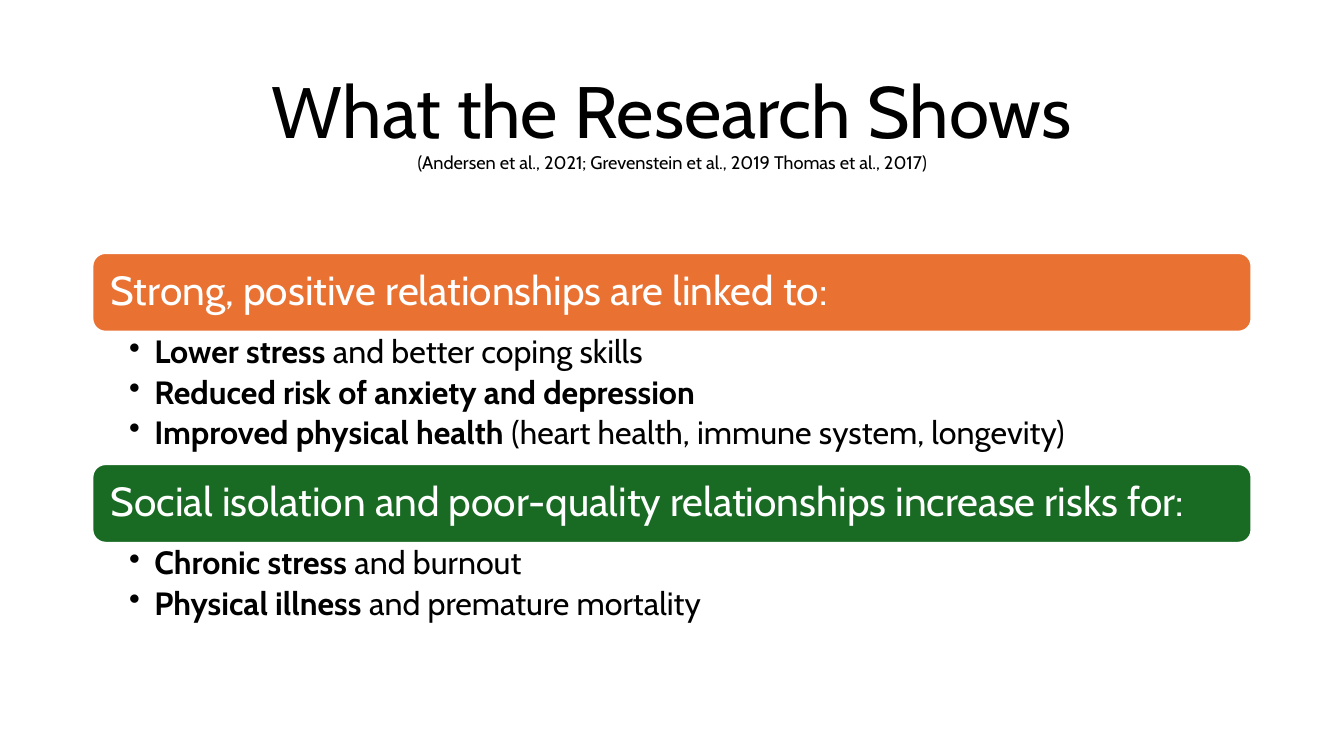
from lxml.etree import SubElement
from pptx import Presentation
from pptx.dml.color import RGBColor
from pptx.enum.shapes import MSO_SHAPE as Shape
from pptx.enum.text import MSO_ANCHOR as Anchor, PP_ALIGN as Align
from pptx.oxml.ns import qn
from pptx.util import Pt

PX = 9525
FONT = "Cabin"
COLORS = {"ink": "000000", "paper": "FFFFFF", "benefit": "E97132", "risk": "196B24"}
LEFT, WIDTH, BANNER_HEIGHT = 88, 1104, 75
SECTIONS = [
    (241, 126, "benefit", "Strong, positive relationships are linked to:", [
        ("Lower stress", " and better coping skills"),
        ("Reduced risk of anxiety and depression", ""),
        ("Improved physical health", " (heart health, immune system, longevity)"),
    ]),
    (442, 84, "risk", "Social isolation and poor-quality relationships increase risks for:", [
        ("Chronic stress", " and burnout"),
        ("Physical illness", " and premature mortality"),
    ]),
]


def color(name):
    """Return the named colour."""
    return RGBColor.from_string(COLORS[name])


def set_all(target, values):
    """Set every attribute in the dict on the target."""
    for name, value in values.items():
        setattr(target, name, value)


def place(top, height):
    """Return the full-width rectangle at this height in EMU."""
    return [length * PX for length in (LEFT, top, WIDTH, height)]


def set_frame(frame, anchor, left, top, right, bottom):
    """Set wrapping, anchor and insets of a text frame."""
    set_all(frame, {
        "word_wrap": True, "vertical_anchor": anchor,
        "margin_left": left * PX, "margin_top": top * PX,
        "margin_right": right * PX, "margin_bottom": bottom * PX,
    })


def add_span(para, text, size, ink="ink", bold=False):
    """Add a formatted run to a paragraph."""
    span = para.add_run()
    span.text = text
    set_all(span.font, {"name": FONT, "size": Pt(size), "bold": bold})
    span.font.color.rgb = color(ink)


def add_title(page, heading, citation):
    """Add the centred heading with its citation below."""
    frame = page.shapes.add_textbox(*place(59, 119)).text_frame
    set_frame(frame, Anchor.MIDDLE, 10, 5, 10, 5)
    para = frame.paragraphs[0]
    set_all(para, {"alignment": Align.CENTER, "line_spacing": 0.9})
    add_span(para, heading, 52)
    para.add_line_break()
    add_span(para, citation, 13)


def add_banner(page, top, fill, text):
    """Add a rounded banner with a section heading."""
    box = page.shapes.add_shape(Shape.ROUNDED_RECTANGLE, *place(top, BANNER_HEIGHT))
    box.shadow.inherit = False
    box.fill.solid()
    box.fill.fore_color.rgb = color(fill)
    box.line.color.rgb = color("paper")
    box.line.width = Pt(1.5)
    set_frame(box.text_frame, Anchor.MIDDLE, 14, 12, 14, 12)
    para = box.text_frame.paragraphs[0]
    set_all(para, {"alignment": Align.LEFT, "line_spacing": 0.9})
    add_span(para, text, 29, "paper")


def add_bullets(page, top, height, items):
    """Add a bulleted list with bold openings."""
    frame = page.shapes.add_textbox(*place(top, height)).text_frame
    set_frame(frame, Anchor.TOP, 35, 4, 22, 4)
    for index, (lead, rest) in enumerate(items):
        para = frame.add_paragraph() if index else frame.paragraphs[0]
        set_all(para, {"level": 1, "line_spacing": 0.9, "space_after": Pt(4)})
        properties = para._p.get_or_add_pPr()
        properties.set("marL", str(24 * PX))
        properties.set("indent", str(-24 * PX))
        SubElement(properties, qn("a:buChar"), char="•")
        add_span(para, lead, 23, bold=True)
        if rest:
            add_span(para, rest, 23)


def main():
    """Build and save the slide."""
    deck = Presentation()
    set_all(deck, {"slide_width": 1280 * PX, "slide_height": 720 * PX})
    page = deck.slides.add_slide(deck.slide_layouts[6])
    add_title(page, "What the Research Shows",
              "(Andersen et al., 2021; Grevenstein et al., 2019 Thomas et al., 2017)")
    for top, list_height, fill, heading, items in SECTIONS:
        add_banner(page, top, fill, heading)
        add_bullets(page, top + BANNER_HEIGHT, list_height, items)
    deck.save("out.pptx")


if __name__ == "__main__":
    main()
